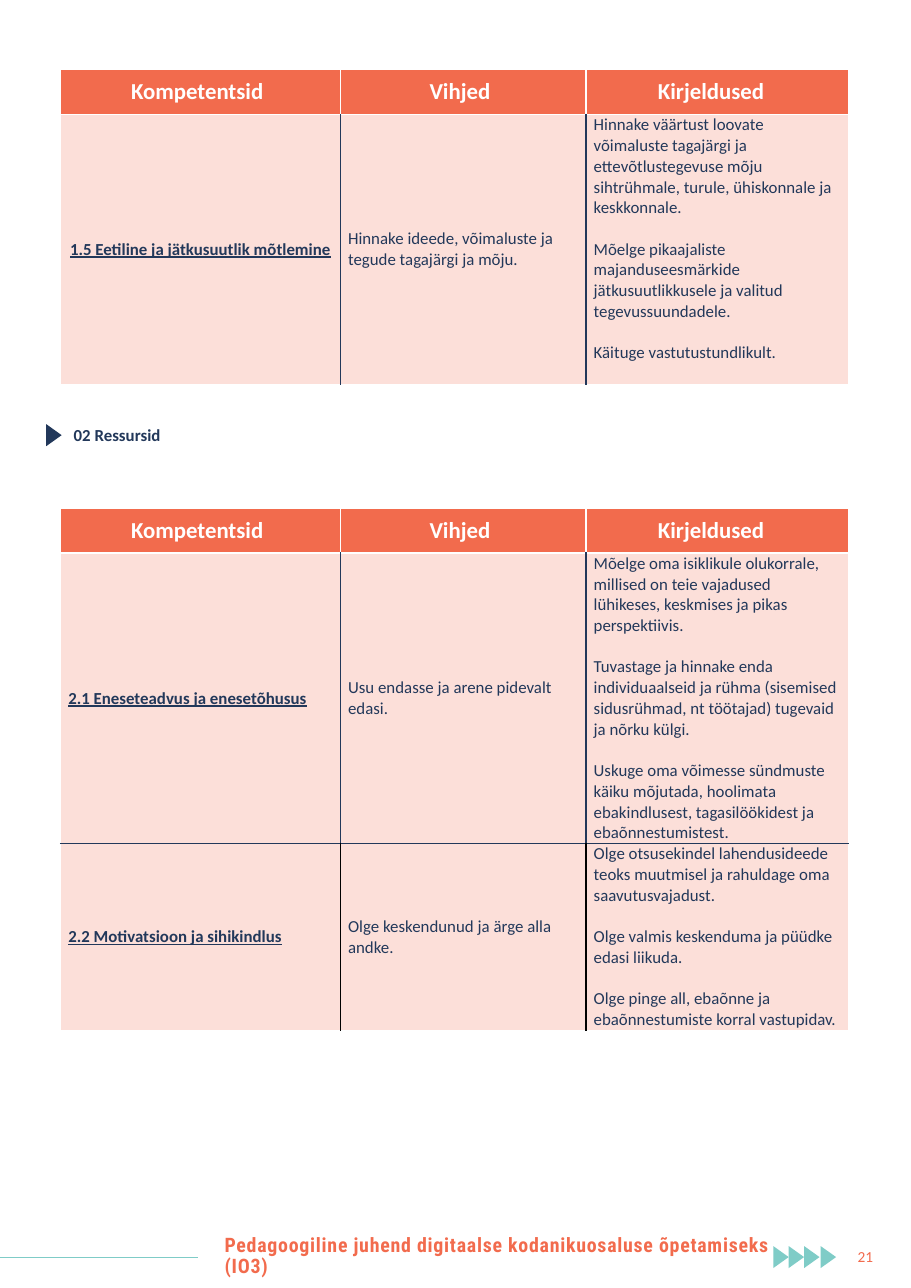
from lxml.etree import SubElement
from pptx import Presentation
from pptx.dml.color import RGBColor
from pptx.enum.shapes import MSO_CONNECTOR
from pptx.enum.text import MSO_ANCHOR, PP_ALIGN
from pptx.oxml.ns import qn
from pptx.util import Pt

PX = 9144  # 100 px to the inch
COLORS = {"coral": "F26B4D", "navy": "22385A", "teal": "7FCCC7",
          "white": "FFFFFF", "black": "000000"}
COLUMN_WIDTHS = [254, 223, 238]
HEADER_HEIGHT = 41
HEADERS = [("Kompetentsid", 16), ("Vihjed", 16), ("Kirjeldused", 21)]  # label, right margin
LINE_GAP = Pt(13.4)

TABLES = [
    (63, [
        (245, PP_ALIGN.CENTER, "navy", "1.5 Eetiline ja jätkusuutlik mõtlemine",
         "Hinnake ideede, võimaluste ja tegude tagajärgi ja mõju.",
         ["Hinnake väärtust loovate võimaluste tagajärgi ja ettevõtlustegevuse mõju "
          "sihtrühmale, turule, ühiskonnale ja keskkonnale.",
          "Mõelge pikaajaliste majanduseesmärkide jätkusuutlikkusele ja valitud "
          "tegevussuundadele.",
          "Käituge vastutustundlikult."]),
    ]),
    (461, [
        (263, PP_ALIGN.LEFT, "navy", "2.1 Eneseteadvus ja enesetõhusus",
         "Usu endasse ja arene pidevalt edasi.",
         ["Mõelge oma isiklikule olukorrale, millised on teie vajadused lühikeses, "
          "keskmises ja pikas perspektiivis.",
          "Tuvastage ja hinnake enda individuaalseid ja rühma (sisemised sidusrühmad, "
          "nt töötajad) tugevaid ja nõrku külgi.",
          "Uskuge oma võimesse sündmuste käiku mõjutada, hoolimata ebakindlusest, "
          "tagasilöökidest ja ebaõnnestumistest."]),
        (170, PP_ALIGN.LEFT, "black", "2.2 Motivatsioon ja sihikindlus",
         "Olge keskendunud ja ärge alla andke.",
         ["Olge otsusekindel lahendusideede teoks muutmisel ja rahuldage oma "
          "saavutusvajadust.",
          "Olge valmis keskenduma ja püüdke edasi liikuda.",
          "Olge pinge all, ebaõnne ja ebaõnnestumiste korral vastupidav."]),
    ]),
]

# shapes, left, top, colour and text of the running elements
TEXTS = [
    ((766, 1126, 39, 29), "21", 10, "Calibri", "coral", False, PP_ALIGN.CENTER, MSO_ANCHOR.MIDDLE),
    ((57, 383, 715, 55), "02 Ressursid", 11, "Calibri", "navy", True,
     PP_ALIGN.JUSTIFY, MSO_ANCHOR.TOP),
    ((194, 1113, 516, 55), "Pedagoogiline juhend digitaalse kodanikuosaluse õpetamiseks (IO3)",
     13, "Roboto Condensed", "coral", True, PP_ALIGN.LEFT, MSO_ANCHOR.MIDDLE),
]


def add_run(paragraph, text, size, color, bold=False, font="Calibri"):
    run = paragraph.add_run()
    run.text = text
    run.font.size = Pt(size)
    run.font.name = font
    run.font.bold = bold
    run.font.color.rgb = RGBColor.from_string(COLORS[color])
    return run


def style_cell(cell, borders, alpha=None):
    """Set 1 pt borders (left, right, top, bottom), then a coral fill."""
    properties = cell._tc.get_or_add_tcPr()
    for side, color in zip("LRTB", borders):
        line = SubElement(properties, qn(f"a:ln{side}"), w=str(Pt(1)))
        solid = SubElement(line, qn("a:solidFill"))
        SubElement(solid, qn("a:srgbClr"), val=COLORS[color])
    cell.fill.solid()
    cell.fill.fore_color.rgb = RGBColor.from_string(COLORS["coral"])
    if alpha:
        fill_color = properties.find(qn("a:solidFill")).find(qn("a:srgbClr"))
        SubElement(fill_color, qn("a:alpha"), val=str(alpha * 1000))


prs = Presentation()
prs.slide_width, prs.slide_height = 827 * PX, 1169 * PX
slide = prs.slides.add_slide(prs.slide_layouts[6])

# Arrowheads: four in the footer, one at the section heading
footer_arrows = slide.shapes.add_group_shape()
arrows = [(footer_arrows.shapes, 702 + 43 * i // 3, 1131, "teal") for i in range(4)]
arrows.append((slide.shapes, 42, 385, "navy"))
for owner, left, top, color in arrows:
    outline = owner.build_freeform(left, top, scale=PX)
    outline.add_line_segments([(left + 14, top + 10), (left, top + 20)], close=True)
    arrow = outline.convert_to_shape()
    arrow.shadow.inherit = False
    arrow.fill.solid()
    arrow.fill.fore_color.rgb = RGBColor.from_string(COLORS[color])
    arrow.line.fill.background()

# Competence tables
for top, competences in TABLES:
    heights = [HEADER_HEIGHT] + [competence[0] for competence in competences]
    table = slide.shapes.add_table(len(heights), 3, 55 * PX, top * PX,
                                   sum(COLUMN_WIDTHS) * PX, sum(heights) * PX).table
    table.horz_banding = False
    for column, width in zip(table.columns, COLUMN_WIDTHS):
        column.width = width * PX
    for row, height in zip(table.rows, heights):
        row.height = height * PX

    for col, (label, right_margin) in enumerate(HEADERS):
        cell = table.cell(0, col)
        cell.vertical_anchor = MSO_ANCHOR.MIDDLE
        cell.margin_right = right_margin * PX
        style_cell(cell, ["white"] * 4)
        heading = cell.text_frame.paragraphs[0]
        heading.alignment = PP_ALIGN.CENTER
        add_run(heading, label, 14.9, "white", bold=True)

    for row, (_, align, divider, name, hint, descriptions) in enumerate(competences, 1):
        above = "white" if row == 1 else "navy"
        below = "white" if row == len(competences) else "navy"
        for col, texts in enumerate([[name], [hint], descriptions]):
            cell = table.cell(row, col)
            cell.margin_left = cell.margin_right = 7 * PX
            cell.margin_top = cell.margin_bottom = 0
            cell.vertical_anchor = MSO_ANCHOR.TOP if col == 2 else MSO_ANCHOR.MIDDLE
            style_cell(cell, ["white" if col == 0 else divider,
                              "white" if col == 2 else divider, above, below], alpha=21)
            for i, text in enumerate(texts):
                frame = cell.text_frame
                paragraph = frame.add_paragraph() if i else frame.paragraphs[0]
                paragraph.alignment = align if col == 0 else PP_ALIGN.LEFT
                if i:
                    paragraph.space_before = LINE_GAP
                run = add_run(paragraph, text, 11, "navy", bold=col == 0)
                run.font.underline = col == 0

# Footer rule
rule = slide.shapes.add_connector(MSO_CONNECTOR.STRAIGHT, 0, 1141 * PX, 180 * PX, 1141 * PX)
rule.line.color.rgb = RGBColor.from_string(COLORS["teal"])
rule.line.width = Pt(0.75)
SubElement(rule._element.spPr, qn("a:effectLst"))

# Page number, section heading and footer title
for box, text, size, font, color, bold, align, anchor in TEXTS:
    frame = slide.shapes.add_textbox(*(length * PX for length in box)).text_frame
    frame.word_wrap = True
    frame.vertical_anchor = anchor
    paragraph = frame.paragraphs[0]
    paragraph.alignment = align
    run = add_run(paragraph, text, size, color, bold, font)
    if bold:
        paragraph.line_spacing = 0.9
        paragraph.space_before = Pt(8.3)
    if font == "Roboto Condensed":
        run.font._element.set("spc", "50")

prs.save("out.pptx")
